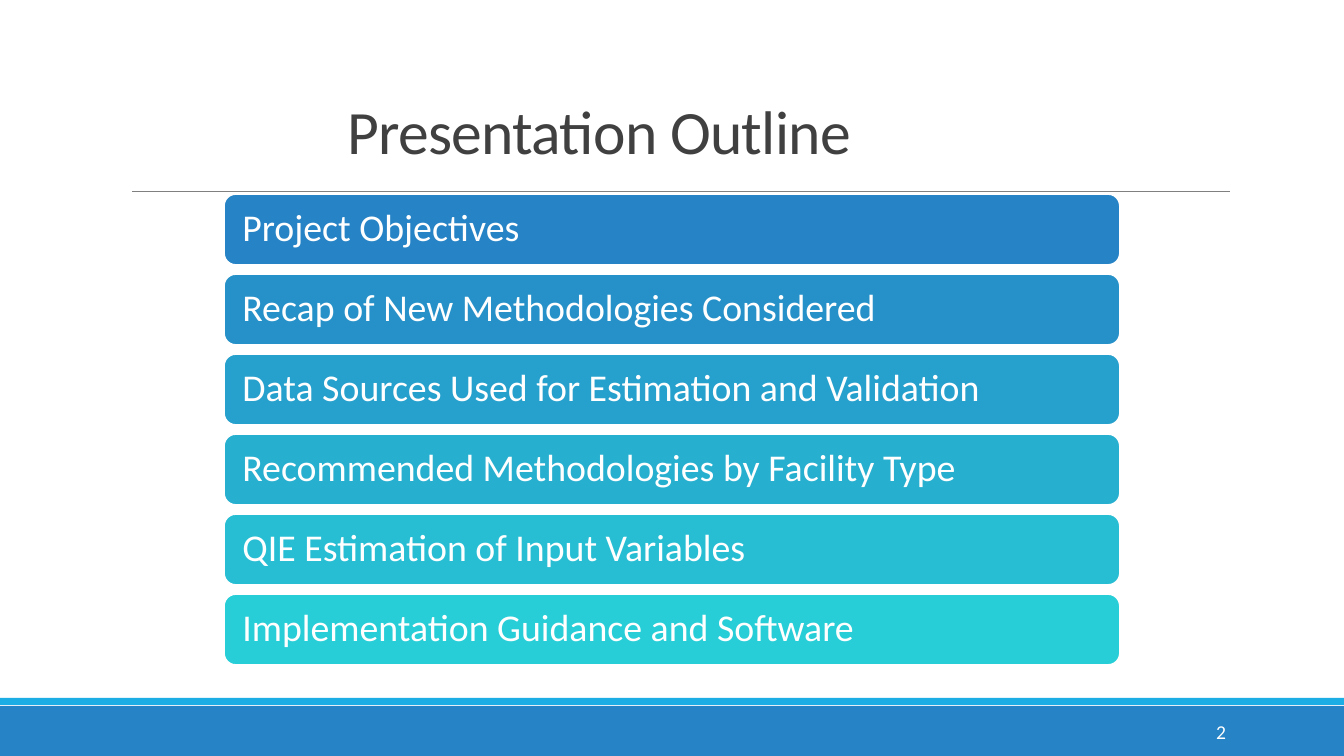
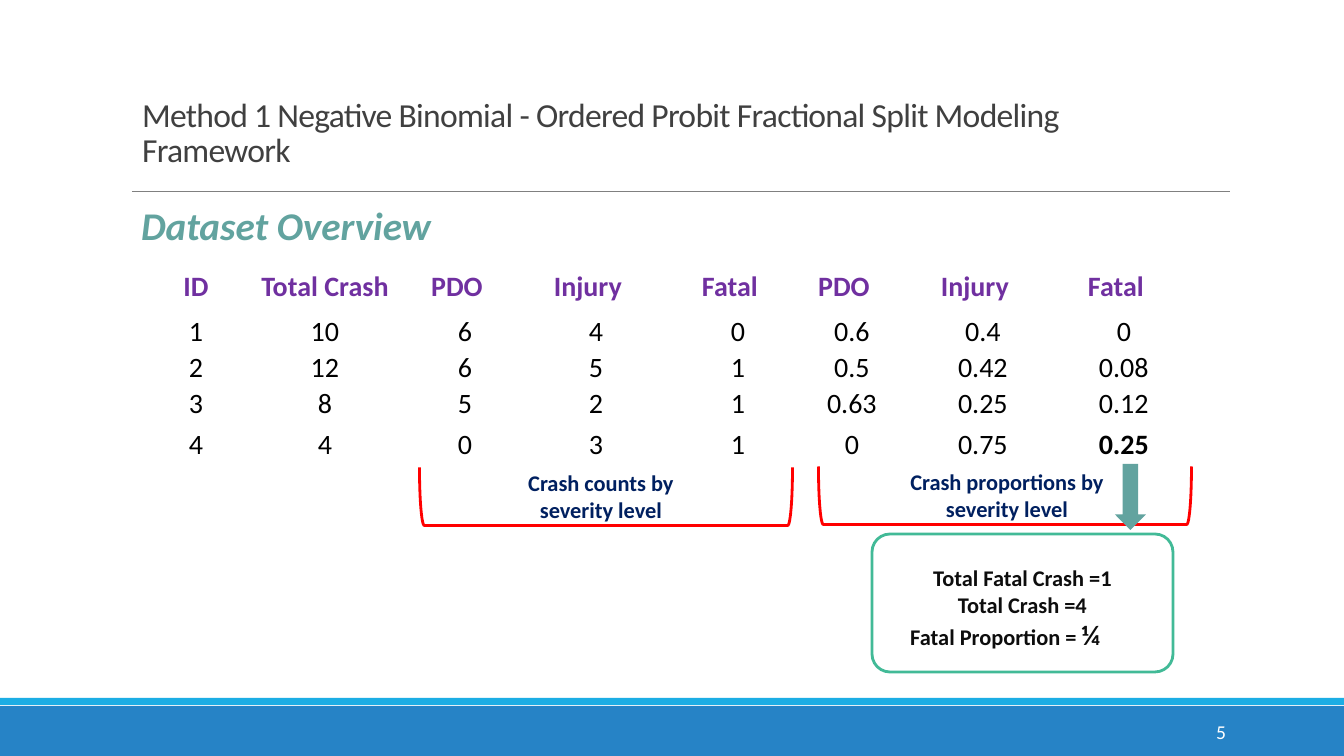
from dataclasses import dataclass
from lxml.etree import SubElement
from pptx import Presentation
from pptx.dml.color import RGBColor
from pptx.enum.shapes import MSO_CONNECTOR, MSO_SHAPE
from pptx.enum.text import MSO_ANCHOR, MSO_AUTO_SIZE, PP_ALIGN
from pptx.oxml.ns import qn
from pptx.util import Pt


@dataclass(frozen=True)
class Theme:
    font: str = "Calibri"
    white: str = "FFFFFF"
    black: str = "000000"
    ink: str = "0D0D0D"
    gray: str = "404040"
    rule: str = "808080"
    blue: str = "2683C6"
    sky: str = "1CADE4"
    navy: str = "002060"
    purple: str = "7030A0"
    teal: str = "62A39F"
    green: str = "42BA97"
    red: str = "FF0000"
    head: int = 44
    sub: int = 28
    item: int = 27
    long: int = 24
    cell: int = 20
    note: int = 16
    foot: int = 14


def px(*nums):
    return [round(n * 914400 / 100.8) for n in nums]


def put(frame, text, size, color, bold=False, align=PP_ALIGN.CENTER):
    frame.text = text
    frame.word_wrap = True
    for para in frame.paragraphs:
        para.alignment = align
        para.font.name = look.font
        para.font.size = Pt(size)
        para.font.bold = bold
        para.font.color.rgb = RGBColor.from_string(color)
    return frame.paragraphs


look = Theme()
deck = Presentation()
deck.slide_width, deck.slide_height = px(1344, 756)

pages = [
    ("Presentation Outline", look.head, (337, 80, 670, 92), "2"),
    ("Method 1 Negative Binomial - Ordered Probit Fractional Split Modeling Framework",
     look.long, (132, 82, 1078, 92), "5"),
]
for name, size, area, num in pages:
    slide = deck.slides.add_slide(deck.slide_layouts[5])
    for top, high, color in [(706, 50, look.blue), (698, 7, look.sky)]:
        band = slide.shapes.add_shape(MSO_SHAPE.RECTANGLE, *px(0, top, 1344, high))
        band.shadow.inherit = False
        band.fill.solid()
        band.fill.fore_color.rgb = RGBColor.from_string(color)
        band.line.fill.background()
    rule = slide.shapes.add_connector(MSO_CONNECTOR.STRAIGHT, *px(132, 191, 1230, 191))
    rule.line.color.rgb = RGBColor.from_string(look.rule)
    rule.line.width = Pt(0.5)
    SubElement(rule.element.spPr, qn("a:effectLst"))

    title = slide.shapes.title
    title.left, title.top, title.width, title.height = px(*area)
    line = put(title.text_frame, name, size, look.gray, align=PP_ALIGN.LEFT)[0]
    line.line_spacing = 0.85
    line.runs[0].font.size = Pt(size)
    line.runs[0].font._element.set("spc", "-50")
    title.text_frame.auto_size = MSO_AUTO_SIZE.NONE
    title.text_frame.vertical_anchor = MSO_ANCHOR.BOTTOM

    foot = slide.shapes.add_textbox(*px(1092, 712, 144, 40)).text_frame
    put(foot, num, look.foot, look.white, align=PP_ALIGN.RIGHT)
    foot.vertical_anchor = MSO_ANCHOR.MIDDLE

outline, method = deck.slides

items = [
    ("Project Objectives", "2683C6"),
    ("Recap of New Methodologies Considered", "2691C9"),
    ("Data Sources Used for Estimation and Validation", "26A0CD"),
    ("Recommended Methodologies by Facility Type", "27AFD0"),
    ("QIE Estimation of Input Variables", "27BED4"),
    ("Implementation Guidance and Software", "27CED7"),
]
for row, (text, color) in enumerate(items):
    bar = outline.shapes.add_shape(MSO_SHAPE.ROUNDED_RECTANGLE, *px(224, 194 + 80 * row, 896, 71))
    bar.shadow.inherit = False
    bar.fill.solid()
    bar.fill.fore_color.rgb = RGBColor.from_string(color)
    bar.line.color.rgb = RGBColor.from_string(look.white)
    bar.line.width = Pt(1.25)
    put(bar.text_frame, text, look.item, look.white, align=PP_ALIGN.LEFT)[0].line_spacing = 0.9
    bar.text_frame.margin_left = px(15)[0]
    bar.text_frame.vertical_anchor = MSO_ANCHOR.MIDDLE

rows = [
    ("ID", "Total Crash", "PDO", "Injury", "Fatal", "PDO", "Injury", "Fatal"),
    ("1", "10", "6", "4", "0", "0.6", "0.4", "0"),
    ("2", "12", "6", "5", "1", "0.5", "0.42", "0.08"),
    ("3", "8", "5", "2", "1", "0.63", "0.25", "0.12"),
    ("4", "4", "0", "3", "1", "0", "0.75", "0.25"),
]
wide = px(108, 150, 130, 132, 152, 76, 186, 96)
high = px(54, 36, 36, 36, 45)
grid = method.shapes.add_table(5, 8, *px(142, 260), sum(wide), sum(high)).table
grid.first_row = grid.horz_banding = False
for col, width in zip(grid.columns, wide):
    col.width = width
for r, texts in enumerate(rows):
    grid.rows[r].height = high[r]
    for c, text in enumerate(texts):
        cell = grid.cell(r, c)
        cell.fill.background()
        cell.vertical_anchor = MSO_ANCHOR.MIDDLE
        cell.margin_left = cell.margin_top = cell.margin_bottom = 0
        cell.margin_right = px(16 if r == 0 and c > 1 else 0)[0]
        bold = r == 0 or (r, c) == (4, 7)
        put(cell.text_frame, text, look.cell, look.black if r else look.purple, bold)

for left, top, text, mid, width in [
    (577, 310, "Crash counts by severity level", 601, 202),
    (976, 309, "Crash proportions by severity level", 1007, 244),
]:
    brace = method.shapes.add_shape(MSO_SHAPE.LEFT_BRACKET, *px(left, top, 58, 373))
    brace.rotation = 270
    brace.shadow.inherit = False
    brace.fill.background()
    brace.line.color.rgb = RGBColor.from_string(look.red)
    brace.line.width = Pt(2)
    label = method.shapes.add_textbox(*px(mid - width / 2, top + 154, width, 64))
    put(label.text_frame, text, look.note, look.navy, True)

note = method.shapes.add_shape(MSO_SHAPE.ROUNDED_RECTANGLE, *px(872, 534, 301, 138))
note.adjustments[0] = 0.13
note.shadow.inherit = False
note.fill.solid()
note.fill.fore_color.rgb = RGBColor.from_string(look.white)
note.line.color.rgb = RGBColor.from_string(look.green)
note.line.width = Pt(2)
frame = note.text_frame
frame.vertical_anchor = MSO_ANCHOR.TOP
frame.margin_left = frame.margin_right = frame.margin_top = frame.margin_bottom = px(25)[0]
last = put(frame, "Total Fatal Crash =1\nTotal Crash =4\nFatal Proportion = ",
           look.note, look.ink, True)[2]
last.alignment = PP_ALIGN.LEFT
last._p.get_or_add_pPr().set("marL", str(px(8)[0]))
part = last.add_run()
part.text = "¼"
part.font.size = Pt(look.cell)

arrow = method.shapes.add_shape(MSO_SHAPE.DOWN_ARROW, *px(1115, 464, 31, 66))
arrow.shadow.inherit = False
arrow.fill.solid()
arrow.fill.fore_color.rgb = RGBColor.from_string(look.teal)
arrow.line.fill.background()

view = method.shapes.add_textbox(*px(69, 196, 434, 57)).text_frame
put(view, "Dataset Overview", look.sub, look.teal, True)[0].font.italic = True

deck.save("out.pptx")
